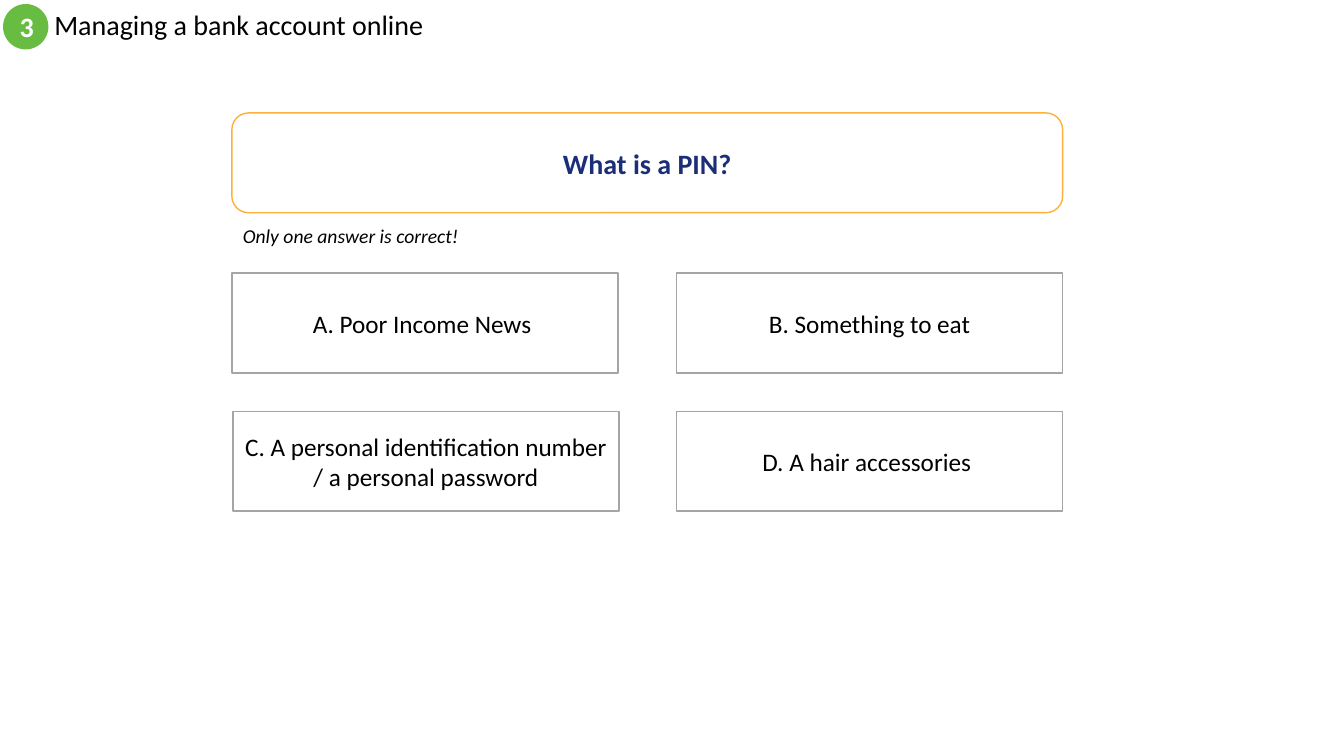
from pptx import Presentation
from pptx import util as u
from pptx.dml.color import RGBColor
from pptx.enum import shapes, text

Inches = u.Inches
kinds = shapes.MSO_SHAPE
align = text.PP_ALIGN


def color(code):
    return RGBColor.from_string(code)


def write(shape, words, size, ink, side, bold=False, italic=False):
    frame = shape.text_frame
    frame.word_wrap = True
    frame.vertical_anchor = text.MSO_ANCHOR.MIDDLE
    para = frame.paragraphs[0]
    para.alignment = side
    run = para.add_run()
    run.text = words
    font = run.font
    font.name = "Calibri"
    font.size = u.Pt(size)
    font.bold = bold
    font.italic = italic
    font.color.rgb = color(ink)
    return para


deck = Presentation()
deck.slide_width = Inches(13.33)
deck.slide_height = Inches(7.5)
slide = deck.slides.add_slide(deck.slide_layouts[6])

title = slide.shapes.add_textbox(Inches(0.44), Inches(0.04), Inches(8), Inches(0.45))
para = write(title, "Managing a bank account online", 20, "000000", align.LEFT)
para.line_spacing = 0.9

wide, high = 3.83, 0.99
left, right = 2.3, 6.71
top, low = 2.71, 4.08
oval, round_box, box = kinds.OVAL, kinds.ROUNDED_RECTANGLE, kinds.RECTANGLE
answers = [
    ("A. Poor Income News ", left, top),
    ("B. Something to eat", right, top),
    ("C. A personal identification number / a personal password", left + 0.01, low),
    ("D. A hair accessories ", right, low),
]
items = [
    (oval, 0.03, 0.04, 0.45, 0.45, "68BC42", None, "3", 20, "FFFFFF", True),
    (round_box, left, 1.12, 8.24, high, "FFFFFF", "FCB13A", "What is a PIN?", 20, "1C2E78", True),
]
for words, x, y in answers:
    items.append((box, x, y, wide, high, "FFFFFF", "A5A5A5", words, 18, "000000", False))

for kind, x, y, w, h, fill, edge, words, size, ink, bold in items:
    shape = slide.shapes.add_shape(kind, Inches(x), Inches(y), Inches(w), Inches(h))
    shape.shadow.inherit = False
    shape.fill.solid()
    shape.fill.fore_color.rgb = color(fill)
    if edge:
        shape.line.color.rgb = color(edge)
        shape.line.width = u.Pt(1)
    else:
        shape.line.fill.background()
    write(shape, words, size, ink, align.CENTER, bold)

hint = slide.shapes.add_textbox(Inches(2.31), Inches(2.17), Inches(2.36), Inches(0.34))
write(hint, "Only one answer is correct!", 14, "000000", align.LEFT, italic=True)
hint.text_frame.word_wrap = False
hint.text_frame.vertical_anchor = text.MSO_ANCHOR.TOP
hint.text_frame.auto_size = text.MSO_AUTO_SIZE.SHAPE_TO_FIT_TEXT

deck.save("out.pptx")
